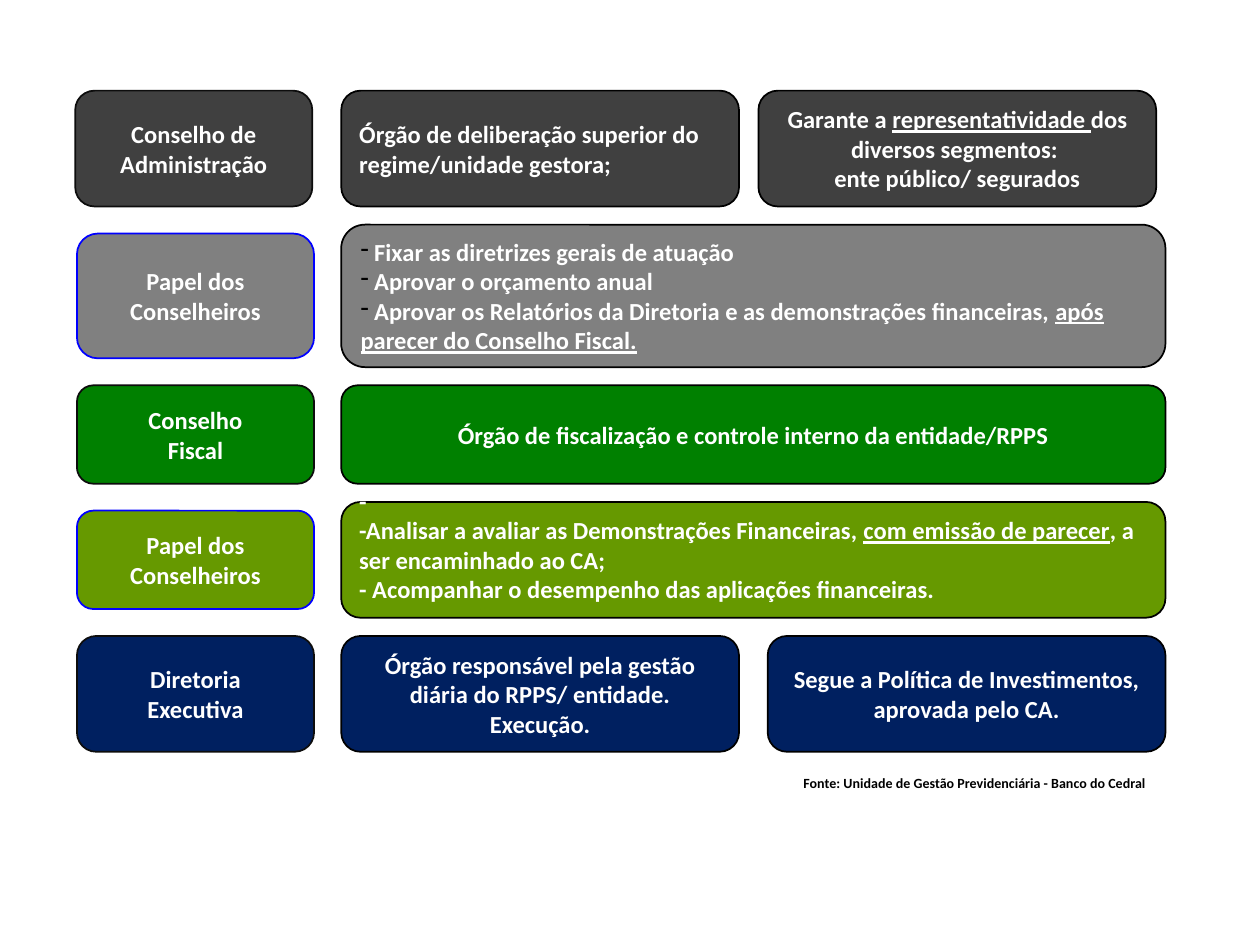
"""Build the slide on the boards of a pension fund and their roles."""
from dataclasses import dataclass

from lxml.etree import SubElement
from pptx import Presentation
from pptx.dml.color import RGBColor as Rgb
from pptx.enum.shapes import MSO_SHAPE as Kind
from pptx.enum.text import MSO_ANCHOR as Anchor, MSO_AUTO_SIZE as Fit, PP_ALIGN as Align
from pptx.oxml.ns import qn
from pptx.util import Pt


@dataclass(frozen=True)
class Theme:
    """Hold the colours and type sizes."""
    font: str = "Calibri"
    body: int = 14
    note: int = 8
    white: str = "FFFFFF"
    black: str = "000000"
    ink: str = "0D0D0D"
    blue: str = "0000FF"
    dark: str = "404040"
    gray: str = "808080"
    green: str = "008000"
    lime: str = "669900"
    navy: str = "002060"


@dataclass(frozen=True)
class Cell:
    """Describe one rounded box; underscores in its lines mark underlined words."""
    left: float
    width: float
    lines: tuple
    align: Align = Align.CENTER
    dash: bool = False
    lift: float = 0
    high: float = 0
    edge: str = Theme.black


@dataclass(frozen=True)
class Row:
    """Describe one band of boxes that share a fill."""
    high: float
    fill: str
    cells: tuple


THEME = Theme()
TOP, GAP = 51.8, 10.4
TAG, TAGW = 44, 135.5
MID, HALF, FULL = 195, 227.3, 471
RIGHT = MID + FULL - HALF

ROWS = (
    Row(66.2, THEME.dark, (
        Cell(43, TAGW, ("Conselho de Administração",), edge=THEME.ink),
        Cell(MID, HALF, ("Órgão de deliberação superior do regime/unidade gestora;",),
             Align.LEFT),
        Cell(433.4, HALF, ("Garante a _representatividade _dos diversos segmentos: ",
                           "ente público/ segurados")),
    )),
    Row(81.4, THEME.gray, (
        Cell(TAG, TAGW, ("Papel dos Conselheiros",), high=71.3, edge=THEME.blue),
        Cell(MID, FULL, (
            " Fixar as diretrizes gerais de atuação",
            " Aprovar o orçamento anual",
            " Aprovar os Relatórios da Diretoria e as demonstrações financeiras, "
            "_após parecer do Conselho Fiscal._"), Align.LEFT, dash=True),
    )),
    Row(56.2, THEME.green, (
        Cell(TAG, TAGW, ("Conselho", "Fiscal"), edge=THEME.ink),
        Cell(MID, FULL, ("Órgão de fiscalização e controle interno da entidade/RPPS",)),
    )),
    Row(66.2, THEME.lime, (
        Cell(TAG, TAGW, ("Papel dos Conselheiros",), high=56.2, edge=THEME.blue),
        Cell(MID, FULL, (
            "-",
            "-Analisar a avaliar as Demonstrações Financeiras, "
            "_com emissão de parecer_, a ser encaminhado ao CA;",
            "- Acompanhar o desempenho das aplicações financeiras."),
            Align.LEFT, lift=17),
    )),
    Row(66.2, THEME.navy, (
        Cell(TAG, TAGW, ("Diretoria", "Executiva"), edge=THEME.ink),
        Cell(MID, HALF, ("Órgão responsável pela gestão diária do RPPS/ entidade. "
                         "Execução.",)),
        Cell(RIGHT, HALF, ("Segue a Política de Investimentos, aprovada pelo CA.",)),
    )),
)


def style(item, form: dict) -> None:
    """Set each attribute in the dict on the item."""
    for name, value in form.items():
        setattr(item, name, value)


def bullet(para) -> None:
    """Give the paragraph a black dash."""
    props = para._p.get_or_add_pPr()
    style_of = {"marL": "0", "indent": "0"}
    for name, value in style_of.items():
        props.set(name, value)
    tint = SubElement(props, qn("a:buClr"))
    SubElement(tint, qn("a:srgbClr")).set("val", THEME.black)
    SubElement(props, qn("a:buChar")).set("char", "-")


def write(frame, lines: tuple, size: int, color: str, align: Align,
          dash: bool = False) -> None:
    """Fill the frame with one paragraph per line."""
    for i, line in enumerate(lines):
        para = frame.add_paragraph() if i else frame.paragraphs[0]
        para.alignment = align
        if dash:
            bullet(para)
        for j, part in enumerate(line.split("_")):
            if not part:
                continue
            run = para.add_run()
            run.text = part
            style(run.font, {"name": THEME.font, "size": Pt(size), "bold": True,
                             "underline": j % 2 == 1})
            run.font.color.rgb = Rgb.from_string(color)


def draw(slide, cell: Cell, row: Row, top: float) -> None:
    """Draw one box, centred on the height of its row."""
    high = cell.high or row.high
    box = slide.shapes.add_shape(
        Kind.ROUNDED_RECTANGLE, Pt(cell.left), Pt(top + (row.high - high) / 2),
        Pt(cell.width), Pt(high))
    box.shadow.inherit = False
    box.fill.solid()
    box.fill.fore_color.rgb = Rgb.from_string(row.fill)
    box.line.color.rgb = Rgb.from_string(cell.edge)
    box.line.width = Pt(1)
    style(box.text_frame, {"word_wrap": True, "vertical_anchor": Anchor.MIDDLE,
                           "margin_bottom": Pt(3.6 + cell.lift)})
    write(box.text_frame, cell.lines, THEME.body, THEME.white, cell.align, cell.dash)


def main() -> None:
    """Build and save the slide."""
    deck = Presentation()
    style(deck, {"slide_width": Pt(720), "slide_height": Pt(540)})
    slide = deck.slides.add_slide(deck.slide_layouts[6])
    top = TOP
    for row in ROWS:
        for cell in row.cells:
            draw(slide, cell, row, top)
        top += row.high + GAP
    note = slide.shapes.add_textbox(Pt(452), Pt(439), Pt(224.6), Pt(17))
    style(note.text_frame, {"word_wrap": True, "auto_size": Fit.SHAPE_TO_FIT_TEXT})
    write(note.text_frame,
          ("Fonte: Unidade de Gestão Previdenciária - Banco do Cedral",),
          THEME.note, THEME.black, Align.LEFT)
    deck.save("out.pptx")


if __name__ == "__main__":
    main()
